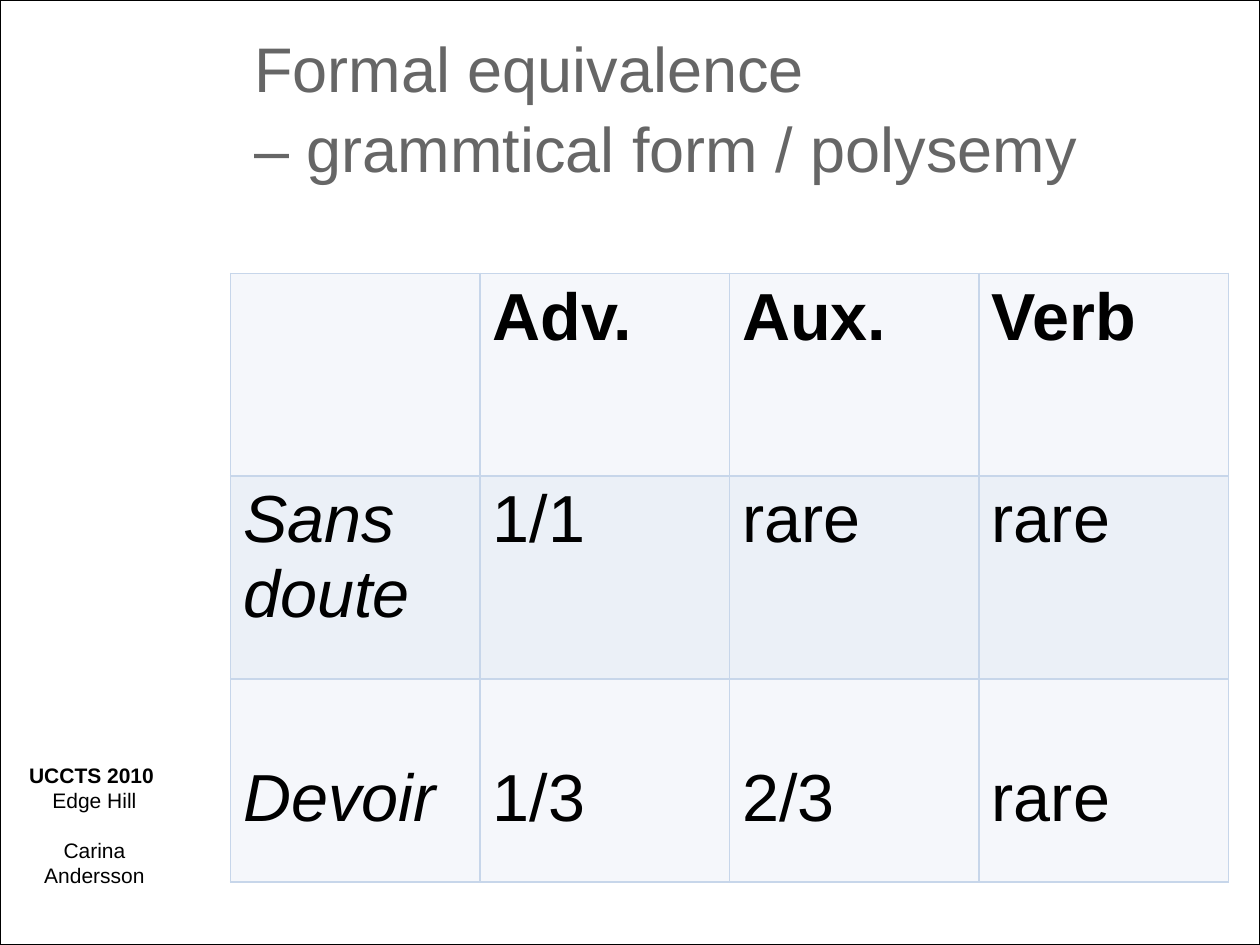
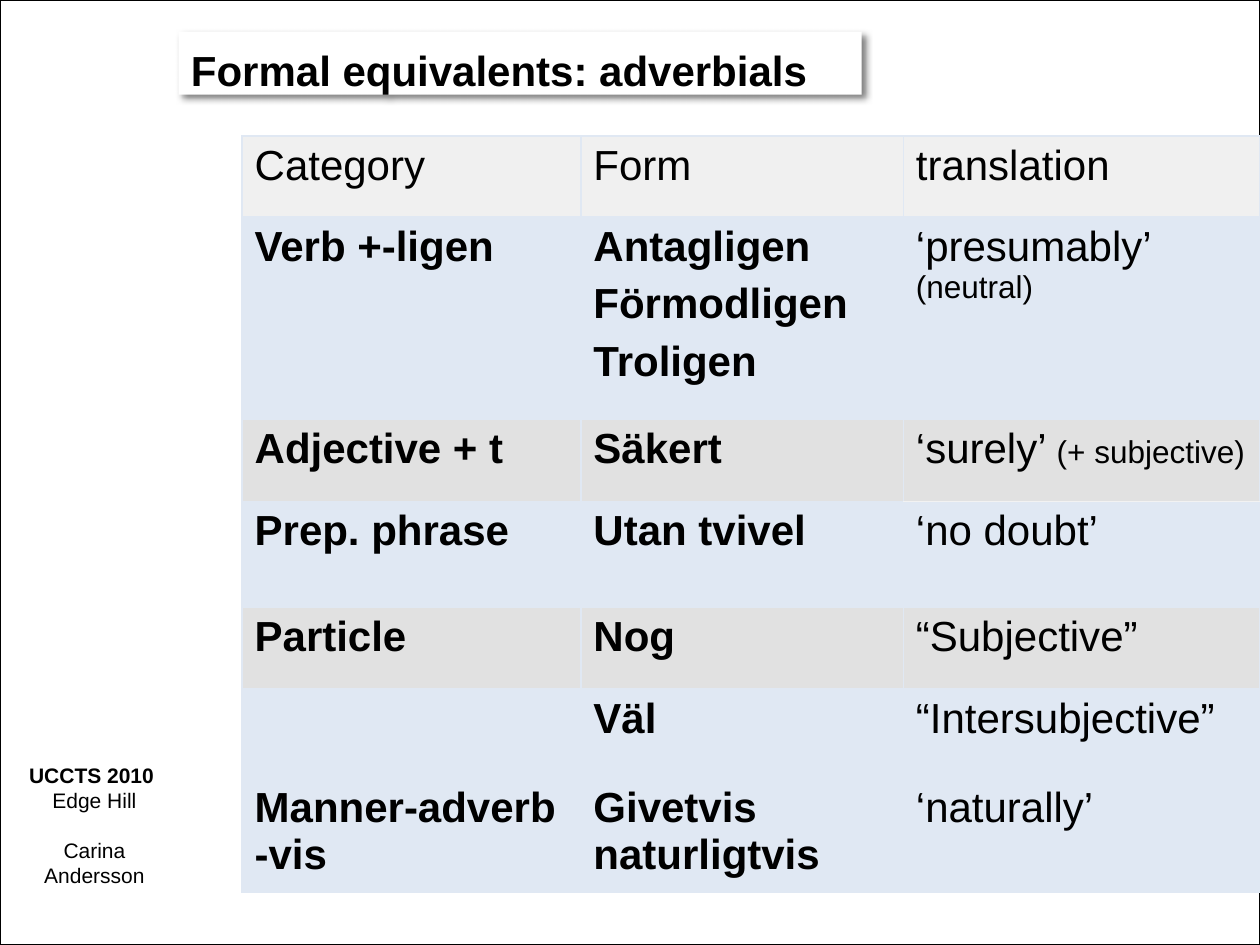
"""Build two slides on formal equivalents, each with a title, a table and a footer."""
from lxml.etree import SubElement
from pptx import Presentation
from pptx.dml.color import RGBColor
from pptx.enum.shapes import MSO_SHAPE
from pptx.enum.text import MSO_ANCHOR, PP_ALIGN
from pptx.oxml import parse_xml
from pptx.oxml.ns import qn
from pptx.util import Cm, Pt

FONT = "Arial"
BLACK, GREY, WHITE = "000000", "666666", "FFFFFF"
PALE, PALE_BLUE, GRID = "F5F7FB", "EBF0F7", "C7D6EA"
HEADER_GREY, BAND_GREY, BAND_BLUE, SEAM = "F0F0F0", "E1E1E1", "E0E8F3", "F2F2F2"
WIDTH, HEIGHT = 25.4, 19.05
BOLD, PLAIN, SMALL = {"bold": True}, {"bold": False}, {"bold": False, "size": 18}

FOOTER = [[("UCCTS 2010 ", BOLD)], "Edge Hill", "Carina Andersson"]

FREQUENCY_TITLE = "Formal equivalence\n– grammtical form / polysemy"
FREQUENCIES = [
    ("", "Adv.", "Aux.", "Verb"),
    ("Sans doute", "1/1", "rare", "rare"),
    ("Devoir", "1/3", "2/3", "rare"),
]
FREQUENCY_FILLS = [PALE, PALE_BLUE, PALE]
FREQUENCY_TOP_MARGINS = [0.13, 0.13, 1.66]

ADVERBIAL_TITLE = "Formal equivalents: adverbials"
ADVERBIALS = [
    (["Category"], ["Form"], ["translation"]),
    (["Verb +-ligen"], ["Antagligen", "Förmodligen", "Troligen"],
     ["‘presumably’", [("(neutral)", SMALL)]]),
    (["Adjective + t"], ["Säkert"], [[("‘surely’ ", PLAIN), ("(+ subjective)", SMALL)]]),
    (["Prep. phrase"], ["Utan tvivel"], ["‘no doubt’"]),
    (["Particle"], ["Nog"], ["“Subjective”"]),
    ([], ["Väl"], ["“Intersubjective”"]),
    (["Manner-adverb", "-vis"], ["Givetvis", "naturligtvis"], ["‘naturally’"]),
]
ADVERBIAL_COLUMNS = [6.83, 6.5, 7.19]
ADVERBIAL_ROWS = [1.64, 4.08, 1.65, 2.14, 1.64, 1.8, 2.29]
ADVERBIAL_FILLS = [HEADER_GREY, BAND_BLUE, BAND_GREY, BAND_BLUE, BAND_GREY, BAND_BLUE, BAND_BLUE]


def color(hex_code):
    return RGBColor.from_string(hex_code)


def write(frame, paragraphs, size, fill=BLACK, bold=False, italic=False,
          align=PP_ALIGN.LEFT, after=0, leading=None):
    """Write paragraphs, each a string or a list of (text, font overrides)."""
    frame.word_wrap = True
    for index, content in enumerate(paragraphs):
        paragraph = frame.paragraphs[0] if index == 0 else frame.add_paragraph()
        paragraph.alignment = align
        paragraph.space_after = Pt(after)
        if leading:
            paragraph.line_spacing = leading
        for words, changes in [(content, {})] if isinstance(content, str) else content:
            look = {"size": size, "bold": bold, "italic": italic} | changes
            for number, line in enumerate(words.split("\n")):
                if number:
                    paragraph.add_line_break()
                run = paragraph.add_run()
                run.text = line
                run.font.name = FONT
                run.font.size = Pt(look["size"])
                run.font.bold = look["bold"]
                run.font.italic = look["italic"]
                run.font.color.rgb = color(fill)


def add_title(slide, words, box, **look):
    title = slide.shapes.add_textbox(*map(Cm, box))
    title.text_frame.vertical_anchor = MSO_ANCHOR.BOTTOM
    title.text_frame.margin_bottom = 0
    write(title.text_frame, [words], **look)
    return title


def cast_shadow(shape):
    shape.fill.solid()
    shape.fill.fore_color.rgb = color(WHITE)
    effects = SubElement(shape._element.spPr, qn("a:effectLst"))
    shadow = SubElement(effects, qn("a:outerShdw"), blurRad="50800", dist="38100", dir="2700000")
    tint = SubElement(shadow, qn("a:srgbClr"), val=BLACK)
    SubElement(tint, qn("a:alpha"), val="50000")


def set_border(cell, edge, hex_code, points=1):
    properties = cell._tc.get_or_add_tcPr()
    tag = f"a:ln{edge}"
    for old in properties.findall(qn(tag)):
        properties.remove(old)
    line = parse_xml(
        f'<{tag} xmlns:a="http://schemas.openxmlformats.org/drawingml/2006/main" '
        f'w="{Pt(points)}"><a:solidFill><a:srgbClr val="{hex_code}"/></a:solidFill></{tag}>')
    properties.insert("LRTB".index(edge), line)


def add_grid(slide, left, top, columns, rows, fills, border):
    grid = slide.shapes.add_table(len(rows), len(columns), Cm(left), Cm(top),
                                  Cm(sum(columns)), Cm(sum(rows))).table
    grid.first_row = grid.horz_banding = False
    for column, width in zip(grid.columns, columns):
        column.width = Cm(width)
    for row, height, fill in zip(grid.rows, rows, fills):
        row.height = Cm(height)
        for cell in row.cells:
            cell.fill.solid()
            cell.fill.fore_color.rgb = color(fill)
            for edge in "LRTB":
                set_border(cell, edge, border)
    return grid


def add_framed_slide(deck):
    slide = deck.slides.add_slide(deck.slide_layouts[6])
    frame = slide.shapes.add_shape(MSO_SHAPE.RECTANGLE, 0, 0, Cm(WIDTH), Cm(HEIGHT))
    frame.shadow.inherit = False
    frame.fill.background()
    frame.line.color.rgb = color(BLACK)
    frame.line.width = Pt(0.75)
    footer = slide.shapes.add_textbox(0, Cm(15.24), Cm(3.81), Cm(3.38)).text_frame
    write(footer, FOOTER, size=12, align=PP_ALIGN.CENTER)
    footer.paragraphs[-1].space_before = Pt(14)
    return slide


def build_frequencies(deck):
    slide = add_framed_slide(deck)
    add_title(slide, FREQUENCY_TITLE, (4.88, 0.36, 19.48, 3.38),
              size=36, fill=GREY, leading=1.06)
    grid = add_grid(slide, 4.65, 5.51, [5.03] * 4, [4.09] * 3, FREQUENCY_FILLS, GRID)
    for r, (entries, margin) in enumerate(zip(FREQUENCIES, FREQUENCY_TOP_MARGINS)):
        for c, entry in enumerate(entries):
            cell = grid.cell(r, c)
            cell.margin_top = Cm(margin)
            if entry:
                write(cell.text_frame, [entry], size=38, bold=r == 0, italic=c == 0)


def build_adverbials(deck):
    slide = add_framed_slide(deck)
    title = add_title(slide, ADVERBIAL_TITLE, (3.6, 0.64, 13.77, 1.27), size=24, bold=True)
    cast_shadow(title)
    grid = add_grid(slide, 4.88, 2.74, ADVERBIAL_COLUMNS, ADVERBIAL_ROWS,
                    ADVERBIAL_FILLS, BAND_BLUE)
    for r, entries in enumerate(ADVERBIALS):
        for c, entry in enumerate(entries):
            write(grid.cell(r, c).text_frame, entry, size=24, bold=r > 0 and c < 2,
                  after=6 if len(entry) == 3 else 0)
    for cell in grid.rows[0].cells:
        set_border(cell, "B", BAND_BLUE, 2)
    set_border(grid.cell(2, 2), "B", SEAM)
    set_border(grid.cell(3, 2), "T", SEAM)


def main():
    deck = Presentation()
    deck.slide_width, deck.slide_height = Cm(WIDTH), Cm(HEIGHT)
    build_frequencies(deck)
    build_adverbials(deck)
    deck.save("out.pptx")


if __name__ == "__main__":
    main()
